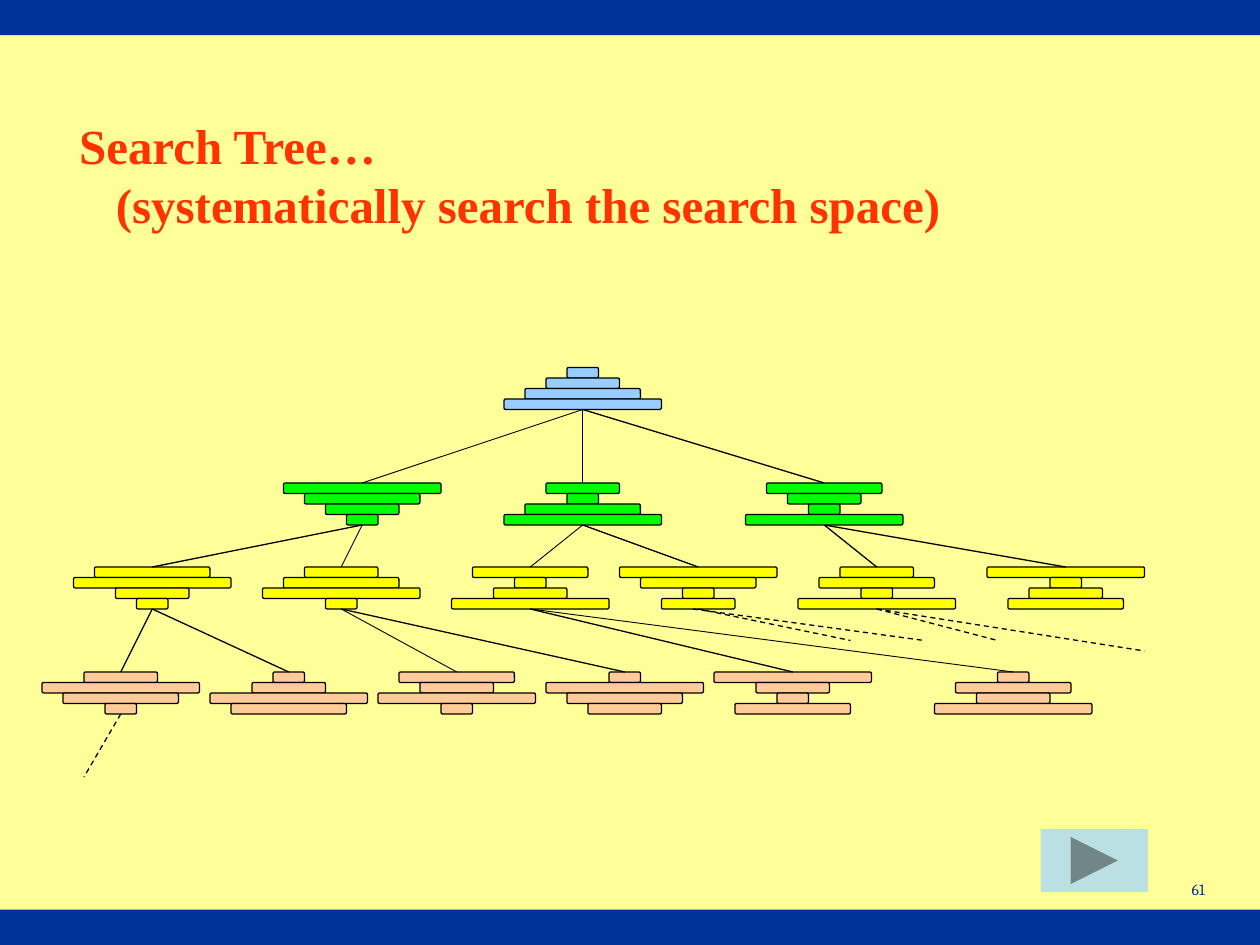
"""Build the search tree slide, laid out on a grid of twelfths of an inch."""
from dataclasses import dataclass

from lxml import etree
from pptx import Presentation
from pptx.dml.color import RGBColor
from pptx.enum.dml import MSO_LINE
from pptx.enum.shapes import MSO_CONNECTOR, MSO_SHAPE
from pptx.enum.text import MSO_ANCHOR, PP_ALIGN
from pptx.oxml.ns import qn
from pptx.util import Inches, Pt

RECTANGLE = MSO_SHAPE.RECTANGLE
ROUNDED = MSO_SHAPE.ROUNDED_RECTANGLE
FORWARD_BUTTON = MSO_SHAPE.ACTION_BUTTON_FORWARD_OR_NEXT
STRAIGHT = MSO_CONNECTOR.STRAIGHT
DASH = MSO_LINE.DASH
LEFT, RIGHT = PP_ALIGN.LEFT, PP_ALIGN.RIGHT
TOP, MIDDLE = MSO_ANCHOR.TOP, MSO_ANCHOR.MIDDLE

COLUMNS, ROWS = 120, 90
STACK_HEIGHT = 4
BAR_WIDTHS = {"1": 3, "2": 7, "3": 11, "4": 15}
THIN, NORMAL = 0.5, 0.75


@dataclass(frozen=True)
class Theme:
    background: str = "FFFF99"
    band: str = "003399"
    title: str = "FF3300"
    ink: str = "000000"
    button: str = "BBE0E3"
    levels: tuple = ("99CCFF", "00FF00", "FFFF00", "FFCC99")
    title_font: str = "Times New Roman"
    number_font: str = "Cambria"
    title_size: int = 28
    number_size: int = 9


LEVEL_TOPS = (35, 46, 54, 64)

# Each node: centre column, disc sizes from top to bottom, parent column, edge weight.
LEVELS = (
    ((55.5, "1234", None, None),),
    ((34.5, "4321", 55.5, THIN), (55.5, "2134", 55.5, THIN), (78.5, "3214", 55.5, NORMAL)),
    ((14.5, "3421", 34.5, NORMAL), (32.5, "2341", 34.5, THIN),
     (50.5, "3124", 55.5, THIN), (66.5, "4312", 55.5, NORMAL),
     (83.5, "2314", 78.5, NORMAL), (101.5, "4123", 78.5, NORMAL)),
    ((11.5, "2431", 14.5, NORMAL), (27.5, "1243", 14.5, NORMAL),
     (43.5, "3241", 32.5, THIN), (59.5, "1432", 32.5, NORMAL),
     (75.5, "4213", 50.5, NORMAL), (96.5, "1324", 50.5, THIN)),
)

UNEXPLORED = (
    ((66.5, 58), (81, 61)),
    ((66, 58), (88, 61)),
    ((83.5, 58), (109, 62)),
    ((83.5, 58), (95, 61)),
    ((11.5, 68), (8, 74)),
)


class SlideBuilder:
    """Draws styled elements on one slide, measured in grid columns and rows."""

    def __init__(self, presentation, theme):
        """Add a blank slide with the theme's background."""
        self.theme = theme
        self.cell_width = presentation.slide_width / COLUMNS
        self.cell_height = presentation.slide_height / ROWS
        self.slide = presentation.slides.add_slide(presentation.slide_layouts[6])
        fill = self.slide.background.fill
        fill.solid()
        fill.fore_color.rgb = RGBColor.from_string(theme.background)

    def place(self, column, row):
        """Convert a grid pair to slide lengths."""
        return round(column * self.cell_width), round(row * self.cell_height)

    def block(self, kind, column, row, width, height, color, outline=None):
        """Draw a filled preset shape."""
        shape = self.slide.shapes.add_shape(
            kind, *self.place(column, row), *self.place(width, height))
        shape.shadow.inherit = False
        shape.fill.solid()
        shape.fill.fore_color.rgb = RGBColor.from_string(color)
        if outline is None:
            shape.line.fill.background()
        else:
            shape.line.color.rgb = RGBColor.from_string(self.theme.ink)
            shape.line.width = Pt(outline)

    def stack(self, center, row, discs, color):
        """Draw a stack of discs from top to bottom."""
        for offset, disc in enumerate(discs):
            width = BAR_WIDTHS[disc]
            self.block(ROUNDED, center - width / 2, row + offset, width, 1, color, NORMAL)

    def line(self, start, end, weight, dash=None):
        """Draw a straight connector between two grid points."""
        connector = self.slide.shapes.add_connector(
            STRAIGHT, *self.place(*start), *self.place(*end))
        connector.line.color.rgb = RGBColor.from_string(self.theme.ink)
        connector.line.width = Pt(weight)
        if dash is not None:
            connector.line.dash_style = dash
        etree.SubElement(connector.line._get_or_add_ln().getparent(), qn("a:effectLst"))

    def text(self, lines, column, row, width, height, font_name, size, color,
             bold=False, alignment=LEFT, anchor=TOP, indent=0):
        """Write lines of text, indenting every line after the first."""
        shape = self.slide.shapes.add_textbox(
            *self.place(column, row), *self.place(width, height))
        text_frame = shape.text_frame
        text_frame.word_wrap = True
        text_frame.vertical_anchor = anchor
        text_frame.text = "\n".join(lines)
        for position, paragraph in enumerate(text_frame.paragraphs):
            paragraph.alignment = alignment
            if position and indent:
                paragraph._p.get_or_add_pPr().set("marL", str(Pt(indent)))
            for run in paragraph.runs:
                run.font.name = font_name
                run.font.size = Pt(size)
                run.font.bold = bold
                run.font.color.rgb = RGBColor.from_string(color)


def main():
    """Assemble and save the slide."""
    theme = Theme()
    presentation = Presentation()
    presentation.slide_width, presentation.slide_height = Inches(10), Inches(7.5)
    builder = SlideBuilder(presentation, theme)

    band_height = 3.36
    for row in (0, ROWS - band_height):
        builder.block(RECTANGLE, 0, row, COLUMNS, band_height, theme.band)

    for level, (top, nodes, color) in enumerate(zip(LEVEL_TOPS, LEVELS, theme.levels)):
        for center, discs, parent, weight in nodes:
            builder.stack(center, top, discs, color)
            if parent is not None:
                parent_bottom = LEVEL_TOPS[level - 1] + STACK_HEIGHT
                builder.line((parent, parent_bottom), (center, top), weight)
    for start, end in UNEXPLORED:
        builder.line(start, end, NORMAL, DASH)

    builder.text(("Search Tree…", "(systematically search the search space)"),
                 6.36, 9.12, 85.56, 15, theme.title_font, theme.title_size, theme.title,
                 bold=True, anchor=MIDDLE, indent=21)
    builder.block(FORWARD_BUTTON, 99.12, 78.96, 10.2, 6, theme.button)
    builder.text(("61",), 90.96, 83.16, 24.96, 6, theme.number_font, theme.number_size,
                 theme.band, alignment=RIGHT)
    presentation.save("out.pptx")


if __name__ == "__main__":
    main()
